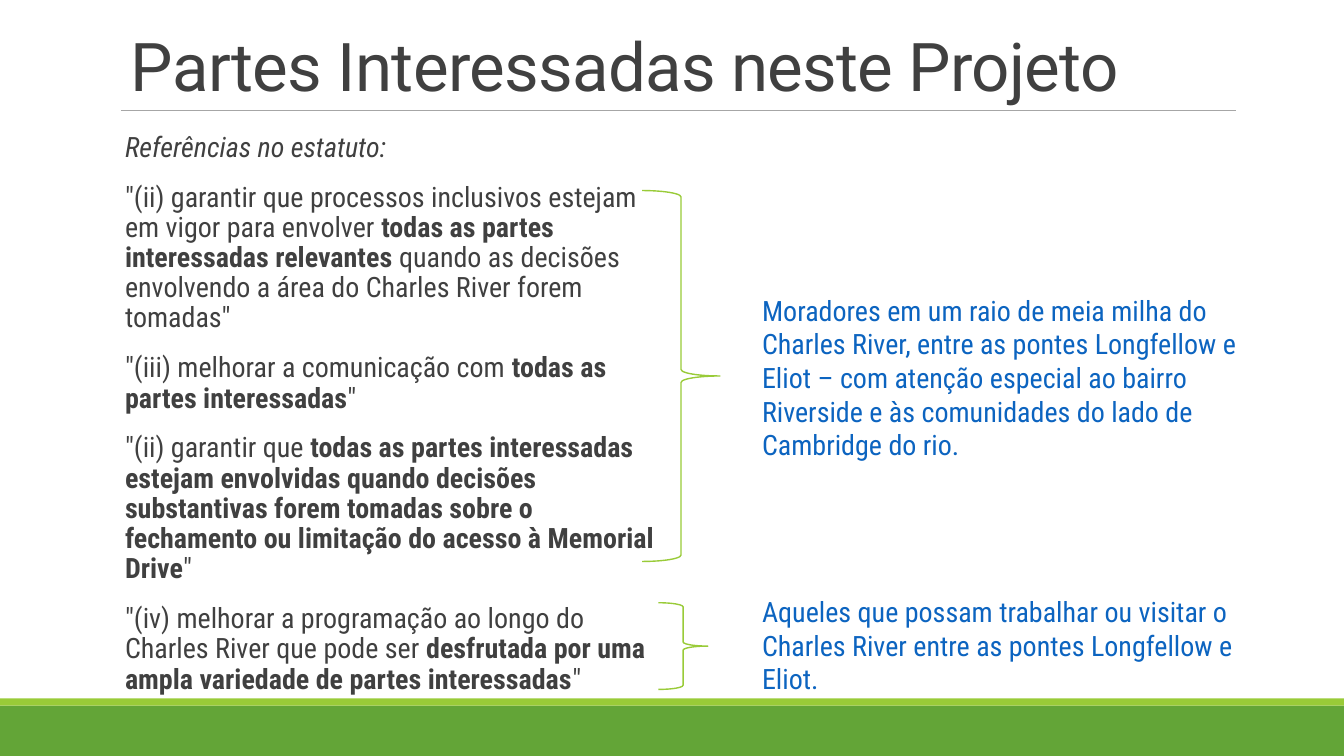
from dataclasses import dataclass
from typing import NamedTuple

from lxml import etree
from pptx import Presentation
from pptx.dml.color import RGBColor
from pptx.enum.shapes import MSO_CONNECTOR, MSO_SHAPE
from pptx.enum.text import MSO_ANCHOR
from pptx.oxml.ns import qn
from pptx.util import Pt

RECTANGLE = MSO_SHAPE.RECTANGLE
RIGHT_BRACE = MSO_SHAPE.RIGHT_BRACE
STRAIGHT = MSO_CONNECTOR.STRAIGHT
TOP = MSO_ANCHOR.TOP
BOTTOM = MSO_ANCHOR.BOTTOM
EMU_PER_PX = 9144
BLANK_LAYOUT = 6


@dataclass(frozen=True)
class Theme:
    ink: str = "404040"
    blue: str = "0C64C0"
    green: str = "63A537"
    lime: str = "99CB38"
    rule: str = "A6A6A6"
    title_font: str = "Roboto"
    body_font: str = "Roboto Condensed"
    title_size: int = 48
    body_size: int = 20
    brace_width: float = 1
    rule_width: float = 0.25


class Box(NamedTuple):
    left: int
    top: int
    width: int
    height: int


THEME = Theme()
PAGE = Box(0, 0, 1333, 750)

TITLE = "Partes Interessadas neste Projeto"
STATUTE = [
    [("Referências no estatuto:", {"italic": True})],
    [
        ('"(ii) garantir que processos inclusivos estejam em vigor para envolver ', {}),
        ("todas as partes interessadas relevantes", {"bold": True}),
        (" quando as decisões envolvendo a área do Charles River forem tomadas\"", {}),
    ],
    [
        ('"(iii) melhorar a comunicação com ', {}),
        ("todas as partes interessadas", {"bold": True}),
        ('"', {}),
    ],
    [
        ('"(ii) garantir que ', {}),
        ("todas as partes interessadas estejam envolvidas quando decisões substantivas "
         "forem tomadas sobre o fechamento ou limitação do acesso à Memorial Drive",
         {"bold": True}),
        ('"', {}),
    ],
    [
        ('"(iv) melhorar a programação ao longo do Charles River que pode ser ', {}),
        ("desfrutada por uma ampla variedade de partes interessadas", {"bold": True}),
        ('"', {}),
    ],
]
RESIDENTS = ("Moradores em um raio de meia milha do Charles River, entre as pontes "
             "Longfellow e Eliot – com atenção especial ao bairro Riverside e às "
             "comunidades do lado de Cambridge do rio.")
VISITORS = ("Aqueles que possam trabalhar ou visitar o Charles River entre as pontes "
            "Longfellow e Eliot.")


def px(length):
    return length * EMU_PER_PX


def emu(box):
    return [px(length) for length in box]


def add_text(slide, box, paras, *, font=THEME.body_font, size=THEME.body_size,
             color=THEME.ink, anchor=TOP, inset=10, line_spacing=1.0,
             before=0, after=0, tracking=0):
    frame = slide.shapes.add_textbox(*emu(box)).text_frame
    frame.word_wrap = True
    frame.vertical_anchor = anchor
    frame.margin_left = frame.margin_right = px(inset)
    frame.margin_top = frame.margin_bottom = px(5)
    for index, spans in enumerate(paras):
        para = frame.add_paragraph() if index else frame.paragraphs[0]
        para.line_spacing = line_spacing
        para.space_before = Pt(before)
        para.space_after = Pt(after)
        for text, style in spans:
            span = para.add_run()
            span.text = text
            span.font.name = font
            span.font.size = Pt(size)
            span.font.color.rgb = RGBColor.from_string(color)
            span.font.bold = style.get("bold", False)
            span.font.italic = style.get("italic", False)
            if tracking:
                span.font._element.set("spc", str(tracking))


def add_band(slide, box, color):
    band = slide.shapes.add_shape(RECTANGLE, *emu(box))
    band.shadow.inherit = False
    band.fill.solid()
    band.fill.fore_color.rgb = RGBColor.from_string(color)
    band.line.fill.background()


def add_brace(slide, box):
    brace = slide.shapes.add_shape(RIGHT_BRACE, *emu(box))
    brace.shadow.inherit = False
    brace.fill.background()
    brace.line.color.rgb = RGBColor.from_string(THEME.lime)
    brace.line.width = Pt(THEME.brace_width)


def add_footer(slide, box):
    stripe_height = 7
    add_band(slide, Box(box.left, box.top + stripe_height, box.width,
                        box.height - stripe_height), THEME.green)
    add_band(slide, Box(box.left, box.top, box.width, stripe_height), THEME.lime)


def add_title(slide, box):
    add_text(slide, Box(box.left, box.top, 1100, box.height), [[(TITLE, {})]],
             font=THEME.title_font, size=THEME.title_size, anchor=BOTTOM,
             line_spacing=0.85, tracking=-50)
    bottom = px(box.top + box.height)
    rule = slide.shapes.add_connector(STRAIGHT, px(box.left), bottom,
                                      px(box.left + box.width), bottom)
    rule.line.color.rgb = RGBColor.from_string(THEME.rule)
    rule.line.width = Pt(THEME.rule_width)
    etree.SubElement(rule._element.spPr, qn("a:effectLst"))


def add_statute(slide, box):
    add_text(slide, box, STATUTE, inset=0, line_spacing=0.9, before=12, after=2)


def add_stakeholders(slide, box):
    text_left = box.left + 109
    groups = [
        (RESIDENTS, Box(box.left, box.top, 77, 368),
         Box(text_left, box.top + 97, 500, 178)),
        (VISITORS, Box(box.left + 16, box.top + 409, 49, 86),
         Box(text_left, box.top + 396, 530, 77)),
    ]
    for text, brace_box, text_box in groups:
        add_brace(slide, brace_box)
        add_text(slide, text_box, [[(text, {})]], color=THEME.blue)


def main():
    deck = Presentation()
    deck.slide_width = px(PAGE.width)
    deck.slide_height = px(PAGE.height)
    slide = deck.slides.add_slide(deck.slide_layouts[BLANK_LAYOUT])
    add_footer(slide, Box(0, 693, PAGE.width, 57))
    add_title(slide, Box(120, 31, 1106, 78))
    add_statute(slide, Box(124, 127, 537, 471))
    add_stakeholders(slide, Box(637, 189, 639, 495))
    deck.save("out.pptx")


if __name__ == "__main__":
    main()
